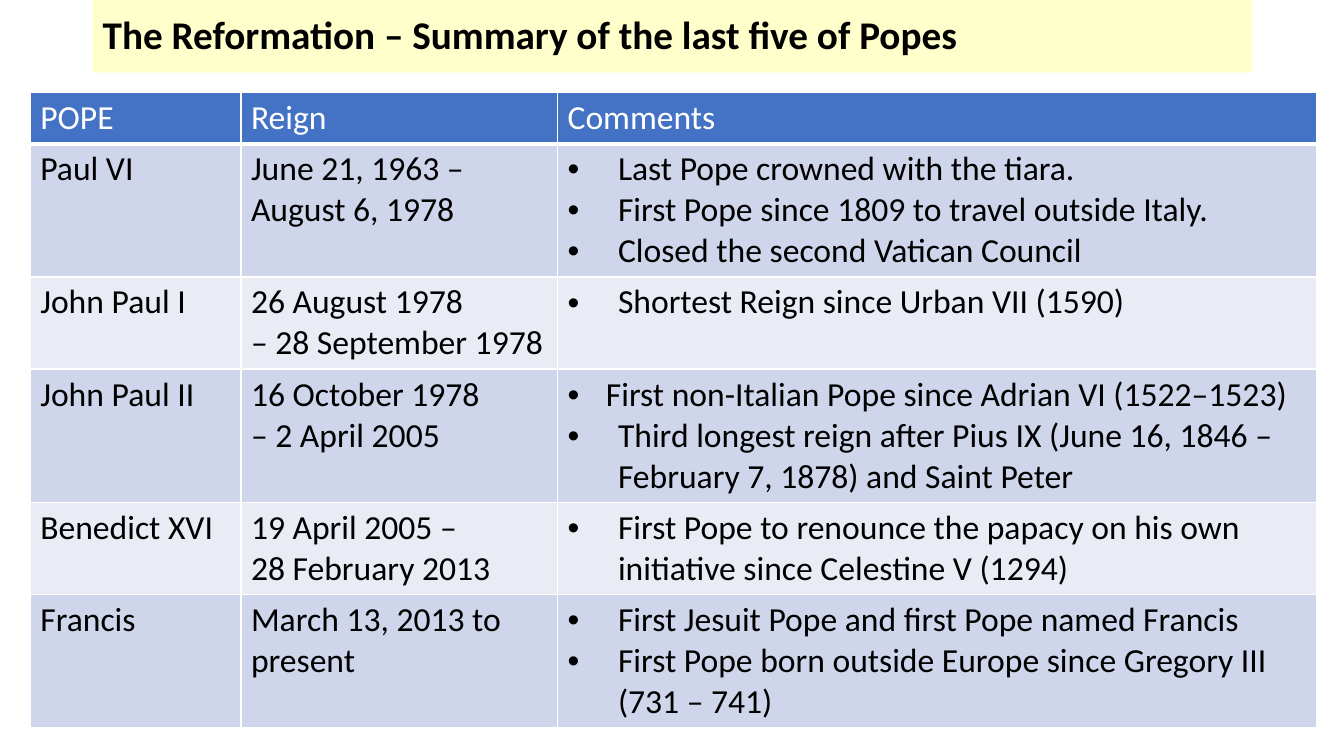
from dataclasses import dataclass

from lxml.etree import SubElement
from pptx import Presentation
from pptx.dml.color import RGBColor
from pptx.enum.shapes import MSO_SHAPE
from pptx.enum.text import MSO_ANCHOR, PP_ALIGN
from pptx.oxml import parse_xml
from pptx.oxml.ns import nsdecls, qn
from pptx.util import Inches, Pt

BLACK = RGBColor(0x00, 0x00, 0x00)
WHITE = RGBColor(0xFF, 0xFF, 0xFF)
CREAM = RGBColor(0xFF, 0xFF, 0xCC)
BLUE = RGBColor(0x44, 0x72, 0xC4)
BANDS = (RGBColor(0xCF, 0xD5, 0xEA), RGBColor(0xE9, 0xEB, 0xF5))
FONT = "Calibri"
COLUMN_WIDTHS = (2.09, 3.14, 7.53)
HEADINGS = ("POPE", "Reign", "Comments")


@dataclass(frozen=True)
class Comment:
    text: str
    indent: float = 0.5


@dataclass(frozen=True)
class Pope:
    name: str
    reign: str
    lines: int
    comments: tuple[Comment, ...]


POPES = (
    Pope("Paul VI", "June 21, 1963 – August 6, 1978", 3, (
        Comment("Last Pope crowned with the tiara."),
        Comment("First Pope since 1809 to travel outside Italy."),
        Comment("Closed the second Vatican Council"),
    )),
    Pope("John Paul I", "26 August 1978\n– 28 September 1978", 2, (
        Comment("Shortest Reign since Urban VII (1590)"),
    )),
    Pope("John Paul II", "16 October 1978\n– 2 April 2005", 3, (
        Comment("First non-Italian Pope since Adrian VI (1522–1523)", 0.38),
        Comment("Third longest reign after Pius IX (June 16, 1846 – "
                "February 7, 1878) and Saint Peter"),
    )),
    Pope("Benedict XVI", "19 April 2005 –\n28 February 2013", 2, (
        Comment("First Pope to renounce the papacy on his own "
                "initiative since Celestine V (1294)"),
    )),
    Pope("Francis", "March 13, 2013 to present", 3, (
        Comment("First Jesuit Pope and first Pope named Francis"),
        Comment("First Pope born outside Europe since Gregory III (731 – 741)"),
    )),
)


def write(p, text: str, *, size: float = 24, color: RGBColor = BLACK,
          bold: bool = False, bullet_indent: float = 0) -> None:
    p.alignment = PP_ALIGN.LEFT
    for i, line in enumerate(text.split("\n")):
        if i:
            p.add_line_break()
        r = p.add_run()
        r.text = line
        r.font.name = FONT
        r.font.size = Pt(size)
        r.font.bold = bold
        r.font.color.rgb = color
    if bullet_indent:
        pPr = p._p.get_or_add_pPr()
        pPr.set("marL", str(Inches(bullet_indent)))
        pPr.set("indent", str(-Inches(bullet_indent)))
        SubElement(pPr, qn("a:buFont")).set("typeface", "Arial")
        SubElement(pPr, qn("a:buChar")).set("char", "•")


def style_cell(cell, fill: RGBColor, bottom: float = 1, top: float = 1) -> None:
    cell.fill.solid()
    cell.fill.fore_color.rgb = fill
    tcPr = cell._tc.get_or_add_tcPr()
    widths = {"lnL": 1, "lnR": 1, "lnT": top, "lnB": bottom}
    for i, (side, width) in enumerate(widths.items()):
        tcPr.insert(i, parse_xml(
            f'<a:{side} {nsdecls("a")} w="{Pt(width)}"><a:solidFill>'
            f'<a:srgbClr val="{WHITE}"/></a:solidFill></a:{side}>'))


def add_title(s) -> None:
    sp = s.shapes.add_shape(MSO_SHAPE.RECTANGLE, Inches(0.92), Inches(0),
                            Inches(11.5), Inches(0.72))
    sp.shadow.inherit = False
    sp.fill.solid()
    sp.fill.fore_color.rgb = CREAM
    sp.line.fill.background()
    tf = sp.text_frame
    tf.word_wrap = True
    tf.vertical_anchor = MSO_ANCHOR.MIDDLE
    p = tf.paragraphs[0]
    p.line_spacing = 0.9
    write(p, "The Reformation – Summary of the last five of Popes",
          size=28, bold=True)


def add_popes_table(s) -> None:
    heights = [0.1 + 0.4 * n for n in (1, *(pope.lines for pope in POPES))]
    table = s.shapes.add_table(
        len(heights), len(COLUMN_WIDTHS), Inches(0.3), Inches(0.92),
        Inches(sum(COLUMN_WIDTHS)), Inches(sum(heights))).table
    for column, width in zip(table.columns, COLUMN_WIDTHS):
        column.width = Inches(width)
    for row, height in zip(table.rows, heights):
        row.height = Inches(height)

    for col, heading in enumerate(HEADINGS):
        cell = table.cell(0, col)
        style_cell(cell, BLUE, bottom=3)
        write(cell.text_frame.paragraphs[0], heading, color=WHITE)

    for row, pope in enumerate(POPES, 1):
        for col in range(len(HEADINGS)):
            style_cell(table.cell(row, col), BANDS[(row - 1) % 2],
                       top=3 if row == 1 else 1)
        for col, text in enumerate((pope.name, pope.reign)):
            write(table.cell(row, col).text_frame.paragraphs[0], text)
        tf = table.cell(row, 2).text_frame
        for i, comment in enumerate(pope.comments):
            p = tf.add_paragraph() if i else tf.paragraphs[0]
            write(p, comment.text, bullet_indent=comment.indent)


def main() -> None:
    prs = Presentation()
    prs.slide_width = Inches(13.33)
    prs.slide_height = Inches(7.5)
    s = prs.slides.add_slide(prs.slide_layouts[6])
    add_title(s)
    add_popes_table(s)
    prs.save("out.pptx")


if __name__ == "__main__":
    main()
